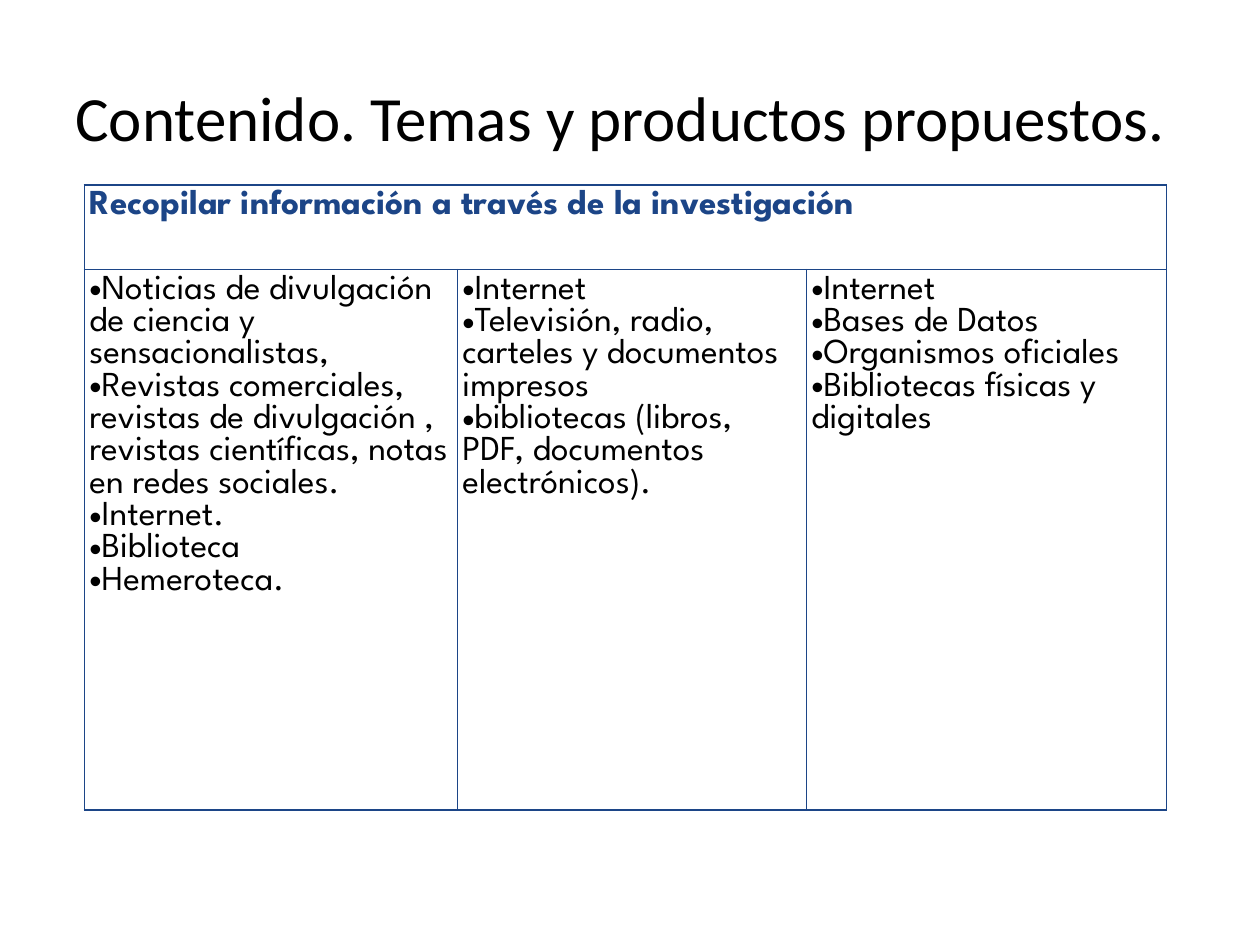
from dataclasses import dataclass

from lxml.etree import SubElement
from pptx import Presentation
from pptx.dml.color import RGBColor
from pptx.enum.text import MSO_ANCHOR, PP_ALIGN
from pptx.oxml.ns import qn
from pptx.util import Inches, Pt

BLUE = "1C4587"
BLACK = "000000"
COLUMN_WIDTHS = (2.96, 2.77, 2.86)
ROW_HEIGHTS = (0.67, 4.29)
CELL_INSET = Inches(0.04)


@dataclass(frozen=True)
class Style:
    font: str
    size: int
    color: str
    bold: bool = False


TITLE = Style("Calibri", 36, BLACK)
HEADING = Style("League Spartan", 20, BLUE, True)
SOURCE = Style("League Spartan", 20, BLACK)

SOURCES = (
    (
        "Noticias de divulgación de ciencia y sensacionalistas,",
        "Revistas comerciales, revistas de divulgación , revistas científicas, notas en redes sociales.",
        "Internet.",
        "Biblioteca",
        "Hemeroteca.",
    ),
    (
        "Internet",
        "Televisión, radio, carteles y documentos impresos",
        "bibliotecas (libros, PDF, documentos electrónicos).",
    ),
    (
        "Internet",
        "Bases de Datos",
        "Organismos oficiales",
        "Bibliotecas físicas y digitales",
    ),
)


def rgb(value: str) -> RGBColor:
    return RGBColor.from_string(value)


def write(frame, lines: tuple, style: Style, bulleted: bool = False) -> None:
    frame.text = "\n".join(lines)
    for paragraph in frame.paragraphs:
        if bulleted:
            properties = paragraph._p.get_or_add_pPr()
            properties.set("marL", "0")
            properties.set("indent", "0")
            SubElement(properties, qn("a:buFont"), typeface="Arial")
            SubElement(properties, qn("a:buChar"), char="•")
        for run in paragraph.runs:
            run.font.name = style.font
            run.font.size = Pt(style.size)
            run.font.bold = style.bold
            run.font.color.rgb = rgb(style.color)


def frame_cell(cell, color: str) -> None:
    cell.margin_left = cell.margin_right = CELL_INSET
    cell.margin_top = cell.margin_bottom = CELL_INSET
    properties = cell._tc.get_or_add_tcPr()
    for side in ("lnL", "lnR", "lnT", "lnB"):
        border = SubElement(properties, qn(f"a:{side}"), w=str(Pt(1)))
        fill = SubElement(border, qn("a:solidFill"))
        SubElement(fill, qn("a:srgbClr"), val=color)
    cell.fill.background()


def add_title(slide, text: str) -> None:
    title = slide.shapes.add_textbox(Inches(0.5), Inches(0.3), Inches(9), Inches(1.25))
    frame = title.text_frame
    frame.word_wrap = True
    frame.vertical_anchor = MSO_ANCHOR.MIDDLE
    write(frame, (text,), TITLE)
    frame.paragraphs[0].alignment = PP_ALIGN.JUSTIFY


def add_sources_table(slide, heading: str) -> None:
    table = slide.shapes.add_table(
        len(ROW_HEIGHTS), len(COLUMN_WIDTHS), Inches(0.67), Inches(1.47),
        Inches(sum(COLUMN_WIDTHS)), Inches(sum(ROW_HEIGHTS)),
    ).table
    table.first_row = table.horz_banding = False
    for column, width in zip(table.columns, COLUMN_WIDTHS):
        column.width = Inches(width)
    for row, height in zip(table.rows, ROW_HEIGHTS):
        row.height = Inches(height)
    for cell in table.iter_cells():
        frame_cell(cell, BLUE)
    table.cell(0, 0).merge(table.cell(0, len(COLUMN_WIDTHS) - 1))
    write(table.cell(0, 0).text_frame, (heading,), HEADING)
    for index, lines in enumerate(SOURCES):
        write(table.cell(1, index).text_frame, lines, SOURCE, bulleted=True)


def main() -> None:
    presentation = Presentation()
    presentation.slide_width = Inches(10)
    presentation.slide_height = Inches(7.5)
    slide = presentation.slides.add_slide(presentation.slide_layouts[6])
    add_title(slide, "Contenido. Temas y productos propuestos.")
    add_sources_table(slide, "Recopilar información a través de la investigación")
    presentation.save("out.pptx")


if __name__ == "__main__":
    main()
